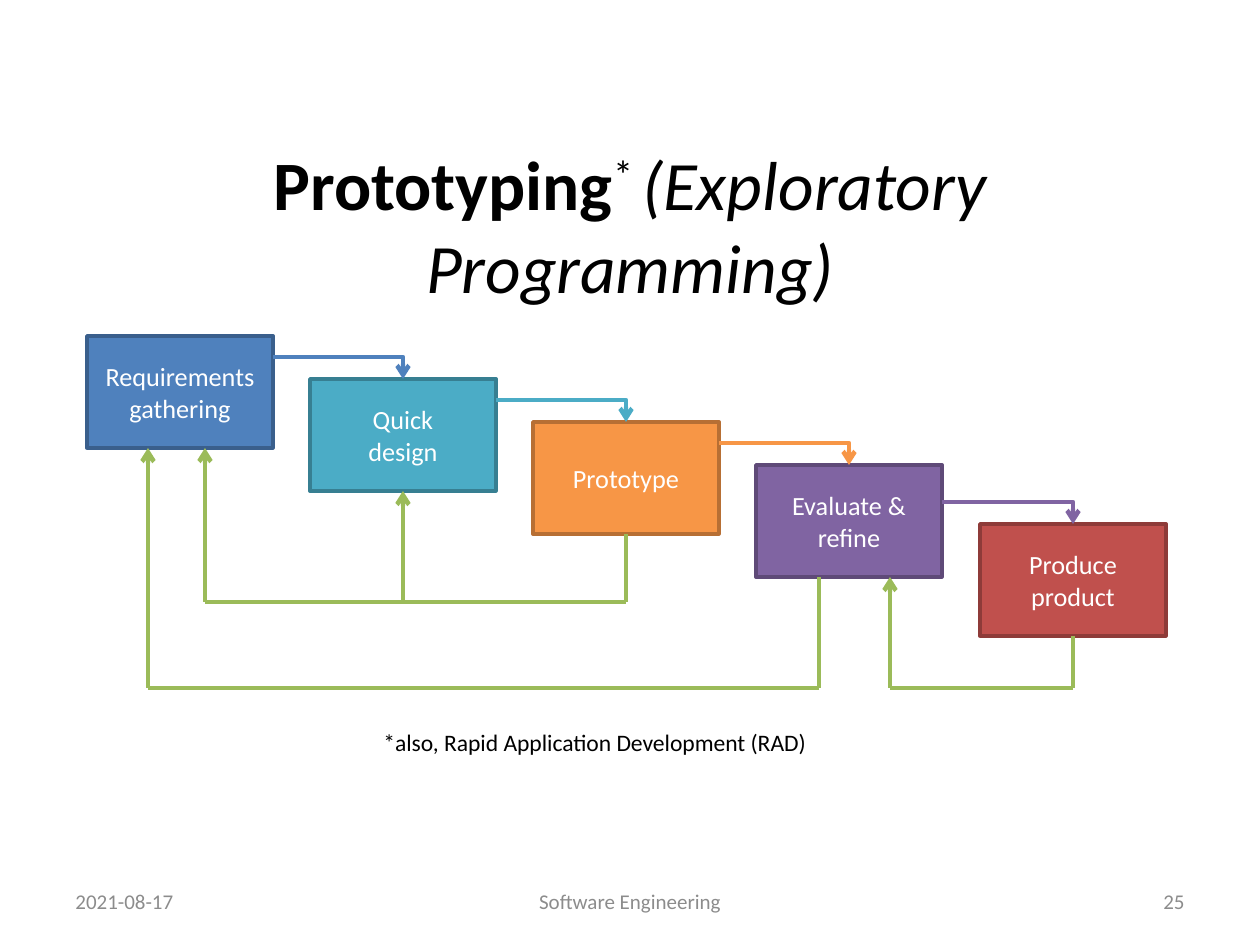
from dataclasses import dataclass

from lxml.etree import SubElement
from pptx import Presentation
from pptx.dml.color import RGBColor
from pptx.enum.shapes import MSO_CONNECTOR as Connector, MSO_SHAPE as Shape
from pptx.enum.text import MSO_ANCHOR as Anchor, MSO_AUTO_SIZE as AutoSize, PP_ALIGN as Align
from pptx.oxml.ns import qn
from pptx.util import Emu, Pt


@dataclass(frozen=True)
class Theme:
    font: str = "Calibri"
    black: str = "000000"
    white: str = "FFFFFF"
    footer_gray: str = "8C8C8C"
    feedback_green: str = "9BBB59"
    title_size: float = 39.6
    box_size: float = 15
    note_size: float = 13.5
    footer_size: float = 12
    box_line: float = 2
    arrow_line: float = 2.5


theme = Theme()
PX = 914400 / 126


def write_text(shape, text, *, size, color, align=Align.LEFT, anchor=Anchor.MIDDLE, wrap=True):
    frame = shape.text_frame
    frame.text = text
    frame.word_wrap = wrap
    frame.vertical_anchor = anchor
    for paragraph in frame.paragraphs:
        paragraph.alignment = align
        for run in paragraph.runs:
            run.font.name = theme.font
            run.font.size = Pt(size)
            run.font.color.rgb = RGBColor.from_string(color)


def add_line(start, end, color, *, bent=False, arrow=False):
    """Join two px points; a bent line runs across and then down."""
    kind = Connector.ELBOW if bent else Connector.STRAIGHT
    line = slide.shapes.add_connector(kind, *(Emu(round(value * PX)) for value in (*start, *end)))
    line.line.color.rgb = RGBColor.from_string(color)
    line.line.width = Pt(theme.arrow_line)
    properties = line._element.spPr
    if bent:
        properties.find(qn("a:prstGeom")).set("prst", "bentConnector2")
    if arrow:
        SubElement(properties.find(qn("a:ln")), qn("a:tailEnd"), type="arrow")
    SubElement(properties, qn("a:effectLst"))


presentation = Presentation()
presentation.slide_width = Emu(round(1260 * PX))
presentation.slide_height = Emu(round(945 * PX))
slide = presentation.slides.add_slide(presentation.slide_layouts[5])

# Title
title = slide.shapes.title
title.left, title.top, title.width, title.height = (
    Emu(round(value * PX)) for value in (87, 156, 1086, 137))
write_text(title, "", size=theme.title_size, color=theme.black, align=Align.CENTER)
title.text_frame.auto_size = AutoSize.NONE
for text, bold, italic, baseline in [
    ("Prototyping", True, False, 0),
    ("* ", False, False, 30000),
    ("(Exploratory Programming)", False, True, 0),
]:
    run = title.text_frame.paragraphs[0].add_run()
    run.text = text
    run.font.name = theme.font
    run.font.size = Pt(theme.title_size)
    run.font.color.rgb = RGBColor.from_string(theme.black)
    run.font.bold = bold
    run.font.italic = italic
    run.font._element.set("baseline", str(baseline))

# Stages, stepping down from left to right
BOX_WIDTH, BOX_HEIGHT = 186, 112
stages = [
    ("Requirements\vgathering", 87, 336, "4F81BD", "3A5F8C"),
    ("Quick\ndesign", 310, 379, "4BACC6", "377F92"),
    ("Prototype", 533, 422, "F79646", "B76F34"),
    ("Evaluate &\vrefine", 756, 465, "8064A2", "5F4A78"),
    ("Produce\nproduct", 980, 524, "C0504D", "8E3B39"),
]
for text, left, top, fill, outline in stages:
    box = slide.shapes.add_shape(
        Shape.RECTANGLE, *(Emu(round(value * PX)) for value in (left, top, BOX_WIDTH, BOX_HEIGHT)))
    box.shadow.inherit = False
    box.fill.solid()
    box.fill.fore_color.rgb = RGBColor.from_string(fill)
    box.line.color.rgb = RGBColor.from_string(outline)
    box.line.width = Pt(theme.box_line)
    write_text(box, text, size=theme.box_size, color=theme.white, align=Align.CENTER, wrap=False)

# Forward arrows from each stage to the top of the next
ARROW_RISE = 22
for (_, left, _, fill, _), (_, next_left, next_top, _, _) in zip(stages, stages[1:]):
    add_line((left + BOX_WIDTH, next_top - ARROW_RISE), (next_left + BOX_WIDTH // 2, next_top),
             fill, bent=True, arrow=True)

# Feedback loops: a rail below the stages, with arrows up and plain drops
bottoms = [top + BOX_HEIGHT for _, _, top, _, _ in stages]
centers = [left + BOX_WIDTH // 2 for _, left, _, _, _ in stages]
loops = [
    (602, [(205, bottoms[0]), (centers[1], bottoms[1])], (centers[2], bottoms[2])),
    (688, [(148, bottoms[0])], (819, bottoms[3])),
    (688, [(890, bottoms[3])], (centers[4], bottoms[4])),
]
for rail, targets, source in loops:
    for x, bottom in targets:
        add_line((x, rail), (x, bottom), theme.feedback_green, arrow=True)
    add_line(source, (source[0], rail), theme.feedback_green)
    add_line((targets[0][0], rail), (source[0], rail), theme.feedback_green)

# Note and footer
for text, bounds, size, color, align, anchor in [
    ("*also, Rapid Application Development (RAD)", (371, 722, 519, 42),
     theme.note_size, theme.black, Align.LEFT, Anchor.TOP),
    ("2021-08-17", (63, 876, 294, 50),
     theme.footer_size, theme.footer_gray, Align.LEFT, Anchor.MIDDLE),
    ("Software Engineering", (430, 876, 400, 50),
     theme.footer_size, theme.footer_gray, Align.CENTER, Anchor.MIDDLE),
    ("25", (903, 876, 294, 50),
     theme.footer_size, theme.footer_gray, Align.RIGHT, Anchor.MIDDLE),
]:
    label = slide.shapes.add_textbox(*(Emu(round(value * PX)) for value in bounds))
    write_text(label, text, size=size, color=color, align=align, anchor=anchor)

presentation.save("out.pptx")
